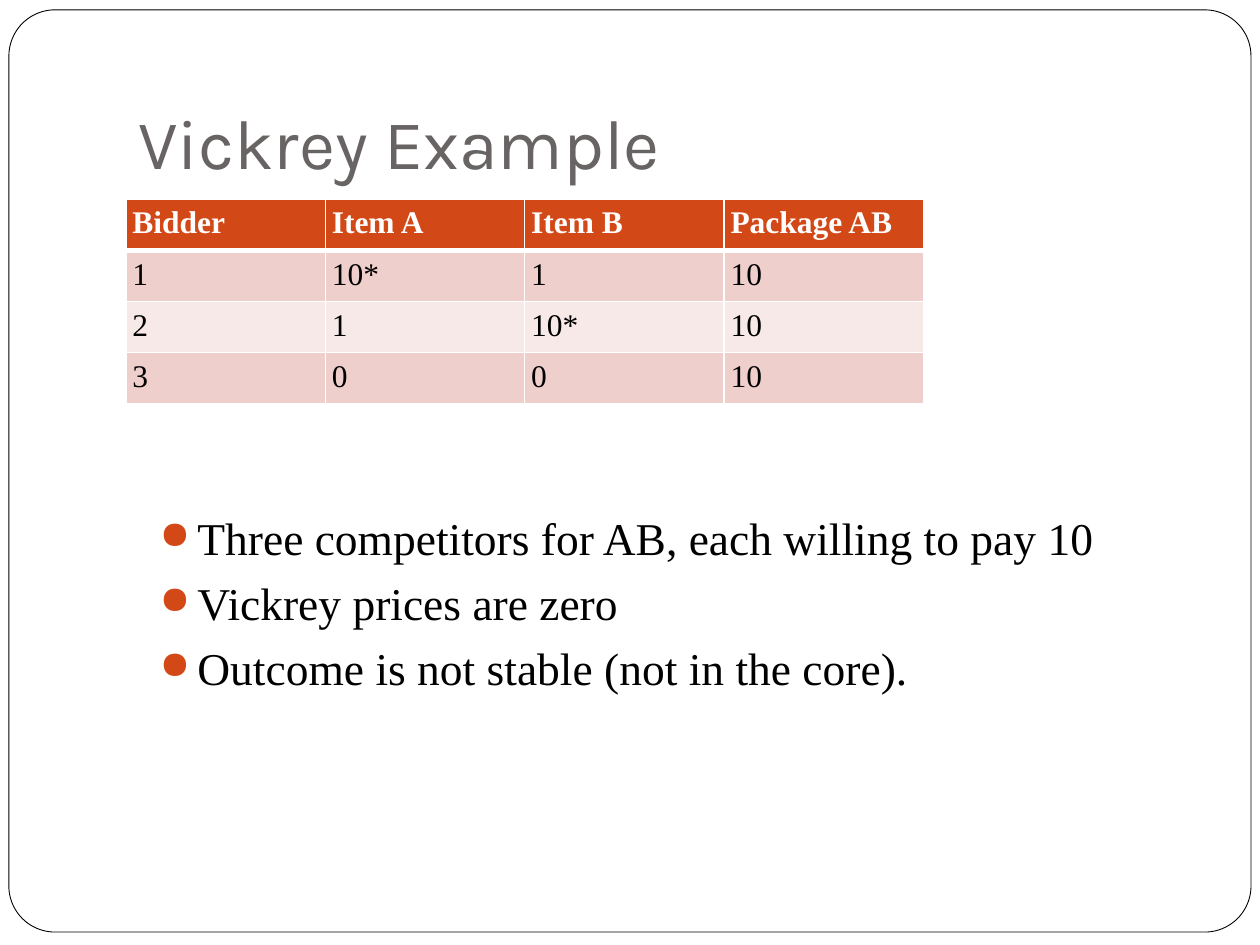
from lxml.etree import SubElement
from pptx import Presentation
from pptx.dml.color import RGBColor
from pptx.enum.shapes import MSO_SHAPE
from pptx.enum.text import MSO_ANCHOR, MSO_AUTO_SIZE, PP_ALIGN
from pptx.oxml.ns import qn
from pptx.util import Cm, Pt

WHITE = RGBColor(0xFF, 0xFF, 0xFF)
BLACK = RGBColor(0x00, 0x00, 0x00)
GREY = RGBColor(0x69, 0x64, 0x64)
ORANGE = RGBColor(0xD3, 0x48, 0x17)
ROSE = RGBColor(0xEF, 0xCF, 0xCC)
PALE_ROSE = RGBColor(0xF7, 0xE9, 0xE8)

SERIF = "Times New Roman"
BIDS = [
    ["Bidder", "Item A", "Item B", "Package AB"],
    ["1", "10*", "1", "10"],
    ["2", "1", "10*", "10"],
    ["3", "0", "0", "10"],
]
POINTS = [
    "Three competitors for AB, each willing to pay 10",
    "Vickrey prices are zero",
    "Outcome is not stable (not in the core).",
]


def apply_format(target, values):
    """Set each named attribute of the target to its value."""
    for name, value in values.items():
        setattr(target, name, value)


def write_span(para, text, color, **font):
    """Add a formatted run to a paragraph."""
    span = para.add_run()
    span.text = text
    apply_format(span.font, font)
    span.font.color.rgb = color


def add_frame(page):
    """Draw the rounded page frame behind everything else."""
    frame = page.shapes.add_shape(
        MSO_SHAPE.ROUNDED_RECTANGLE, Cm(0.18), Cm(0.2), Cm(25.04), Cm(18.59))
    frame.adjustments[0] = 0.05
    frame.shadow.inherit = False
    frame.fill.solid()
    frame.fill.fore_color.rgb = WHITE
    frame.line.color.rgb = BLACK
    frame.line.width = Pt(0.5)
    page.shapes.title.element.addprevious(frame.element)


def set_title(page, text):
    """Place and format the title placeholder."""
    title = page.shapes.title
    apply_format(title, {"left": Cm(2.54), "top": Cm(0.76),
                         "width": Cm(21.59), "height": Cm(3.18)})
    apply_format(title.text_frame, {
        "vertical_anchor": MSO_ANCHOR.BOTTOM, "auto_size": MSO_AUTO_SIZE.NONE,
        "margin_left": Cm(0.25), "margin_right": Cm(0.25),
        "margin_top": Cm(0.13), "margin_bottom": Cm(0.25)})
    para = title.text_frame.paragraphs[0]
    para.alignment = PP_ALIGN.LEFT
    write_span(para, text, GREY, name="Karla", size=Pt(40))


def set_borders(cell, widths):
    """Give a cell white borders of the given widths by side."""
    properties = cell._tc.get_or_add_tcPr()
    for side, width in widths.items():
        line = SubElement(properties, qn(f"a:ln{side}"), w=str(Pt(width)))
        fill = SubElement(line, qn("a:solidFill"))
        SubElement(fill, qn("a:srgbClr"), val=str(WHITE))


def format_cell(cell, text, row):
    """Write one cell in the look of its row."""
    header = row == 0
    margin = Cm(0.13)
    apply_format(cell, {"margin_left": margin, "margin_right": margin,
                        "margin_top": margin, "margin_bottom": margin})
    set_borders(cell, {"L": 1, "R": 1, "T": 3 if row == 1 else 1,
                       "B": 3 if header else 1})
    cell.fill.solid()
    cell.fill.fore_color.rgb = ORANGE if header else ROSE if row % 2 else PALE_ROSE
    write_span(cell.text_frame.paragraphs[0], text, WHITE if header else BLACK,
               name=SERIF, size=Pt(18), bold=header)


def add_bid_table(page, bids):
    """Add the table of bids."""
    table = page.shapes.add_table(
        len(bids), len(bids[0]), Cm(2.54), Cm(4.02), Cm(16.08), Cm(4.12)).table
    for row, texts in enumerate(bids):
        for column, text in enumerate(texts):
            format_cell(table.cell(row, column), text, row)


def add_bullet(para):
    """Give a paragraph a hanging orange bullet."""
    properties = para._p.get_or_add_pPr()
    apply_format(para, {"space_before": Pt(5.8)})
    properties.set("marL", str(Cm(0.76)))
    properties.set("indent", str(-Cm(0.76)))
    color = SubElement(properties, qn("a:buClr"))
    SubElement(color, qn("a:srgbClr"), val=str(ORANGE))
    SubElement(properties, qn("a:buSzPct"), val="85000")
    SubElement(properties, qn("a:buChar"), char="●")


def add_points(page, points):
    """Add the bulleted list below the table."""
    box = page.shapes.add_textbox(Cm(2.97), Cm(10.16), Cm(20.14), Cm(5.92))
    frame = box.text_frame
    frame.word_wrap = True
    for index, point in enumerate(points):
        para = frame.add_paragraph() if index else frame.paragraphs[0]
        add_bullet(para)
        write_span(para, point, BLACK, name=SERIF, size=Pt(26))


def main():
    """Build and save the deck."""
    deck = Presentation()
    apply_format(deck, {"slide_width": Cm(25.4), "slide_height": Cm(19.05)})
    page = deck.slides.add_slide(deck.slide_layouts[5])
    add_frame(page)
    set_title(page, "Vickrey Example")
    add_bid_table(page, BIDS)
    add_points(page, POINTS)
    deck.save("out.pptx")


if __name__ == "__main__":
    main()
